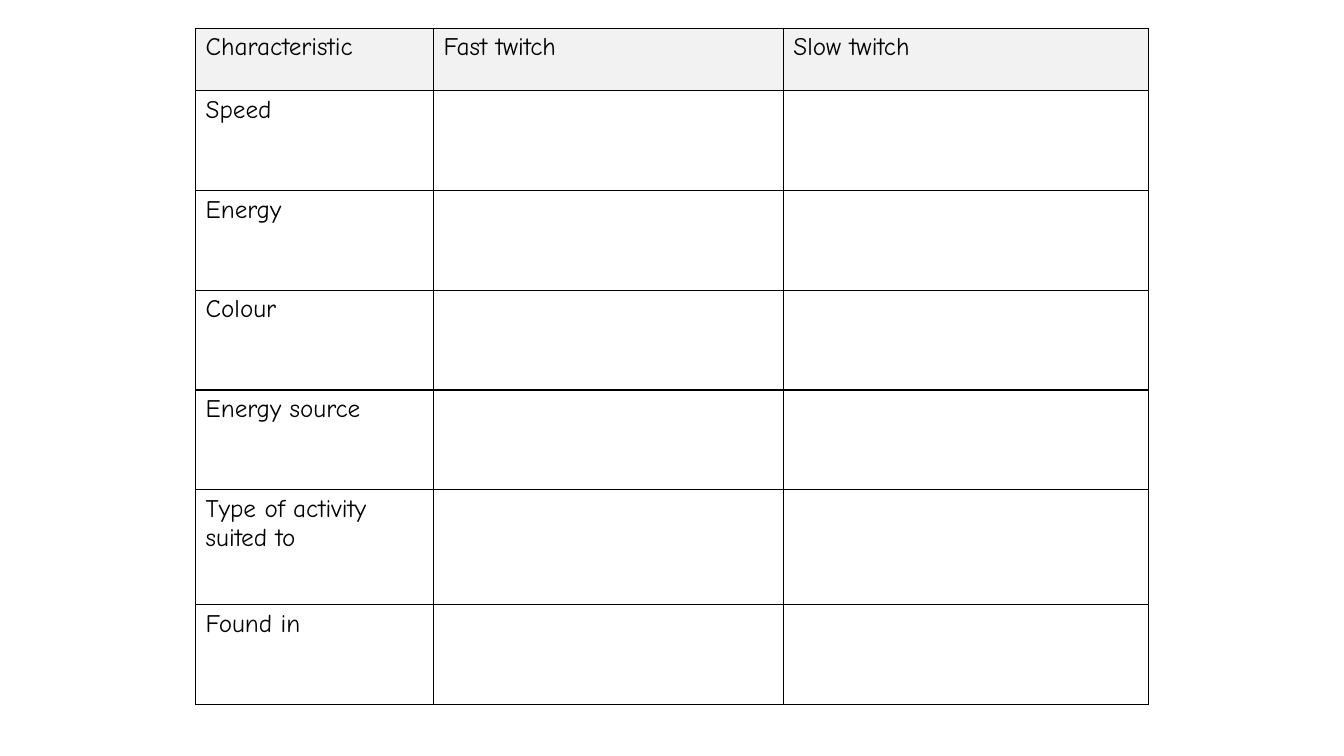
from lxml import etree
from pptx import Presentation
from pptx.dml.color import RGBColor
from pptx.oxml.ns import qn
from pptx.util import Emu, Pt

EMU_PER_PX = 9144  # 100 px to the inch
BLANK_LAYOUT = 6
BLACK, WHITE, GREY = "000000", "FFFFFF", "F2F2F2"
TEXT_FORMAT = {"name": "Comic Neue", "size": Pt(18), "bold": False}
BORDER_WIDTH = Pt(1)

TABLE_LEFT, TABLE_TOP = 194, 28
COLUMN_WIDTHS = [236, 347, 362]
HEADINGS = ["Characteristic", "Fast twitch", "Slow twitch"]
HEADING_HEIGHT = 62
CHARACTERISTICS = {
    "Speed": 99,
    "Energy": 99,
    "Colour": 99,
    "Energy source": 99,
    "Type of activity suited to": 114,
    "Found in": 99,
}


def px(length):
    return Emu(length * EMU_PER_PX)


def color(hex_string):
    return RGBColor.from_string(hex_string)


def add_borders(cell):
    properties = cell._tc.get_or_add_tcPr()
    for position, side in enumerate(("lnL", "lnR", "lnT", "lnB")):
        line = etree.Element(qn(f"a:{side}"), w=str(BORDER_WIDTH))
        fill = etree.SubElement(line, qn("a:solidFill"))
        etree.SubElement(fill, qn("a:srgbClr"), val=BLACK)
        properties.insert(position, line)


def format_cell(cell, text, fill):
    cell.fill.solid()
    cell.fill.fore_color.rgb = color(fill)
    add_borders(cell)
    para = cell.text_frame.paragraphs[0]
    if text:
        para.add_run().text = text
    for font in [para.font] + [span.font for span in para.runs]:
        for name, value in TEXT_FORMAT.items():
            setattr(font, name, value)
        font.color.rgb = color(BLACK)


def add_comparison_table(page):
    rows = [HEADINGS] + [[name, "", ""] for name in CHARACTERISTICS]
    heights = [HEADING_HEIGHT, *CHARACTERISTICS.values()]
    frame = page.shapes.add_table(
        len(rows), len(HEADINGS), px(TABLE_LEFT), px(TABLE_TOP),
        px(sum(COLUMN_WIDTHS)), px(sum(heights)))
    table = frame.table
    table.horz_banding = False
    for column, width in zip(table.columns, COLUMN_WIDTHS):
        column.width = px(width)
    for index, (row, height, texts) in enumerate(zip(table.rows, heights, rows)):
        row.height = px(height)
        for cell, text in zip(row.cells, texts):
            format_cell(cell, text, WHITE if index else GREY)


def main():
    deck = Presentation()
    deck.slide_width, deck.slide_height = px(1333), px(750)
    page = deck.slides.add_slide(deck.slide_layouts[BLANK_LAYOUT])
    add_comparison_table(page)
    deck.save("out.pptx")


if __name__ == "__main__":
    main()
